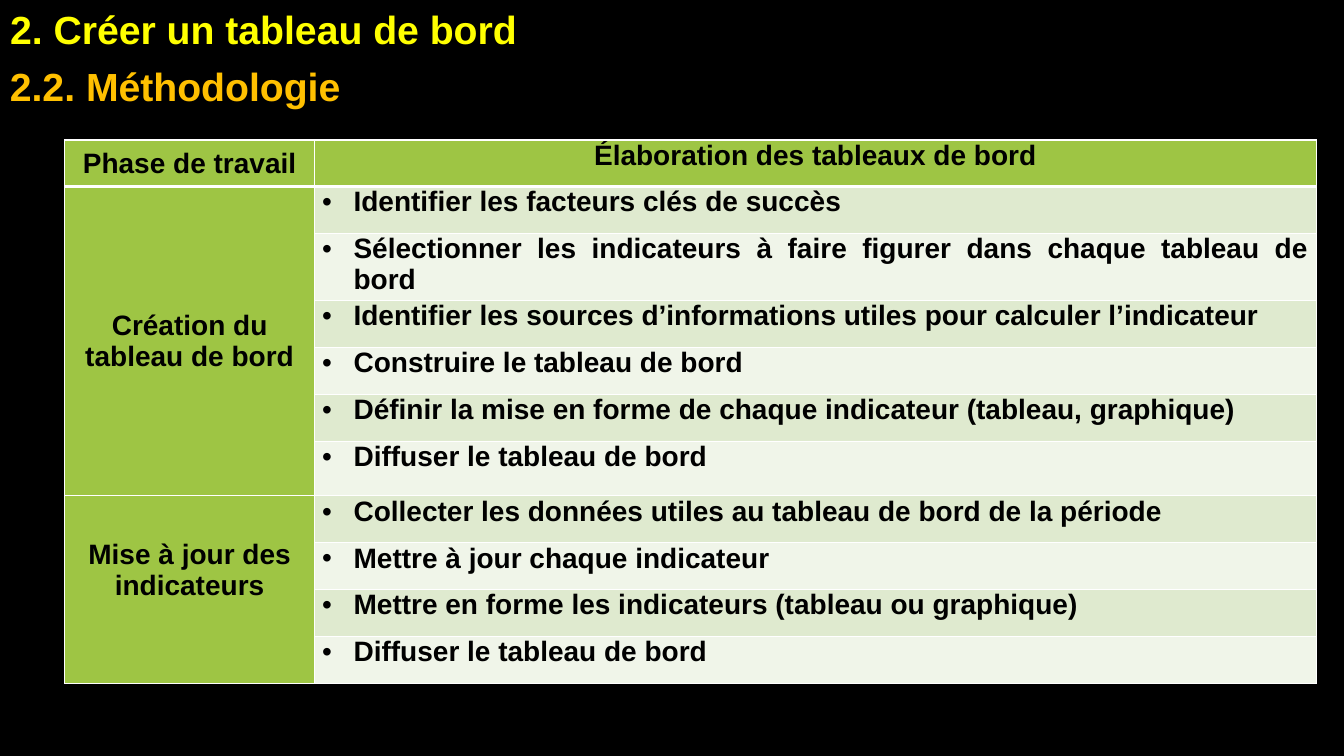
from lxml.etree import SubElement
from pptx import Presentation
from pptx.dml.color import RGBColor
from pptx.enum.text import MSO_ANCHOR, MSO_AUTO_SIZE, PP_ALIGN
from pptx.oxml.ns import qn
from pptx.util import Cm, Pt

BLACK = RGBColor(0x00, 0x00, 0x00)
WHITE = RGBColor(0xFF, 0xFF, 0xFF)
YELLOW = RGBColor(0xFF, 0xFF, 0x00)
ORANGE = RGBColor(0xFF, 0xC0, 0x00)
GREEN = RGBColor(0x9E, 0xC5, 0x44)
BANDS = (RGBColor(0xDF, 0xEA, 0xCF), RGBColor(0xF0, 0xF5, 0xE9))

HEADERS = ("Phase de travail", "Élaboration des tableaux de bord")
PHASES = (
    ("Création du tableau de bord", (
        "Identifier les facteurs clés de succès",
        "Sélectionner les indicateurs à faire figurer dans chaque tableau de bord",
        "Identifier les sources d’informations utiles pour calculer l’indicateur",
        "Construire le tableau de bord",
        "Définir la mise en forme de chaque indicateur (tableau, graphique)",
        "Diffuser le tableau de bord",
    )),
    ("Mise à jour des indicateurs", (
        "Collecter les données utiles au tableau de bord de la période",
        "Mettre à jour chaque indicateur",
        "Mettre en forme les indicateurs (tableau ou graphique)",
        "Diffuser le tableau de bord",
    )),
)
COLUMN_WIDTHS = (Cm(6.3), Cm(25.24))
HEADER_HEIGHT = Cm(1.17)
STEP_HEIGHT = Cm(1.18)
LAST_CREATION_HEIGHT = Cm(1.38)
UPDATE_BOTTOM_MARGIN = Cm(0.95)


def format_text(paragraph, size, color, align=PP_ALIGN.LEFT, before=0, after=0):
    paragraph.alignment = align
    paragraph.space_before, paragraph.space_after = Pt(before), Pt(after)
    for run in paragraph.runs:
        run.font.name = "Arial"
        run.font.size = Pt(size)
        run.font.bold = True
        run.font.color.rgb = color


def place_heading(heading, text, top, width, color, before, after, wrap):
    heading.left, heading.top = Cm(0), top
    heading.width, heading.height = width, Cm(1.45)
    frame = heading.text_frame
    frame.text = text
    frame.word_wrap = wrap
    frame.auto_size = MSO_AUTO_SIZE.SHAPE_TO_FIT_TEXT
    frame.vertical_anchor = MSO_ANCHOR.TOP
    format_text(frame.paragraphs[0], 28, color, before=before, after=after)


def add_borders(cell, top, bottom):
    """Draw white cell edges; top and bottom are widths in points."""
    properties = cell._tc.get_or_add_tcPr()
    for edge, width in (("L", 1), ("R", 1), ("T", top), ("B", bottom)):
        line = SubElement(properties, qn(f"a:ln{edge}"), w=str(Pt(width)))
        fill = SubElement(line, qn("a:solidFill"))
        SubElement(fill, qn("a:srgbClr"), val=str(WHITE))


def add_bullet(paragraph):
    properties = paragraph._p.get_or_add_pPr()
    properties.set("marL", str(Cm(0.79)))
    properties.set("indent", str(-Cm(0.79)))
    SubElement(properties, qn("a:buFont"), typeface="Arial")
    SubElement(properties, qn("a:buChar"), char="•")


def fill_cell(cell, text, color, align, spacing, anchor=MSO_ANCHOR.TOP):
    cell.fill.solid()
    cell.fill.fore_color.rgb = color
    cell.margin_left = cell.margin_right = Cm(0.19)
    cell.margin_top = cell.margin_bottom = Cm(0)
    cell.vertical_anchor = anchor
    cell.text_frame.text = text
    format_text(cell.text_frame.paragraphs[0], 20, BLACK, align, spacing, spacing)


def add_method_table(slide):
    row_count = 1 + sum(len(steps) for _, steps in PHASES)
    table = slide.shapes.add_table(
        row_count, 2, Cm(1.63), Cm(3.53), sum(COLUMN_WIDTHS),
        HEADER_HEIGHT + STEP_HEIGHT * (row_count - 1)).table
    for column, width in zip(table.columns, COLUMN_WIDTHS):
        column.width = width
    for index, row in enumerate(table.rows):
        row.height = STEP_HEIGHT if index else HEADER_HEIGHT
        for cell in row.cells:
            add_borders(cell, 3 if index == 1 else 1, 1 if index else 3)
    table.rows[len(PHASES[0][1])].height = LAST_CREATION_HEIGHT

    for column, header in enumerate(HEADERS):
        anchor = MSO_ANCHOR.TOP if column else MSO_ANCHOR.MIDDLE
        fill_cell(table.cell(0, column), header, GREEN, PP_ALIGN.CENTER, 3, anchor)

    first = 1
    for phase_index, (phase, steps) in enumerate(PHASES):
        phase_cell = table.cell(first, 0)
        phase_cell.merge(table.cell(first + len(steps) - 1, 0))
        fill_cell(phase_cell, phase, GREEN, PP_ALIGN.CENTER, 2, MSO_ANCHOR.MIDDLE)
        for offset, step in enumerate(steps):
            step_cell = table.cell(first + offset, 1)
            fill_cell(step_cell, step, BANDS[offset % 2], PP_ALIGN.JUSTIFY,
                      2 * phase_index)
            add_bullet(step_cell.text_frame.paragraphs[0])
        first += len(steps)
    phase_cell.margin_bottom = UPDATE_BOTTOM_MARGIN


def main():
    deck = Presentation()
    deck.slide_width, deck.slide_height = Cm(33.87), Cm(19.05)
    slide = deck.slides.add_slide(deck.slide_layouts[5])
    slide.background.fill.solid()
    slide.background.fill.fore_color.rgb = BLACK

    place_heading(slide.shapes.title, "2. Créer un tableau de bord",
                  Cm(0), Cm(27.79), YELLOW, 0, 3, True)
    add_method_table(slide)
    subtitle = slide.shapes.add_textbox(Cm(0), Cm(1.45), Cm(8.94), Cm(1.45))
    place_heading(subtitle, "2.2. Méthodologie",
                  Cm(1.45), Cm(8.94), ORANGE, 12, 6, False)
    deck.save("out.pptx")


if __name__ == "__main__":
    main()
